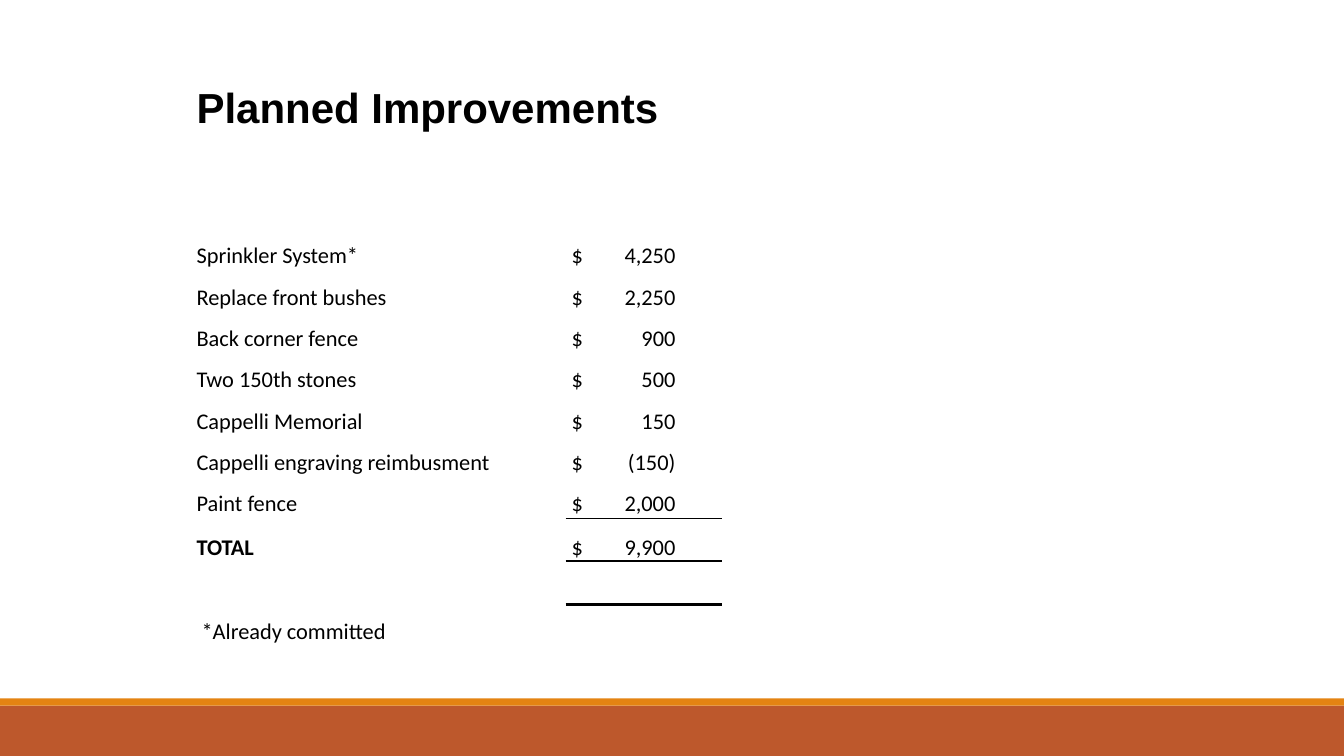
from lxml.etree import SubElement
from pptx import Presentation
from pptx.dml.color import RGBColor
from pptx.enum.shapes import MSO_SHAPE
from pptx.enum.text import MSO_ANCHOR
from pptx.oxml import parse_xml
from pptx.oxml.ns import nsdecls, qn
from pptx.util import Inches, Pt

BLACK = RGBColor(0x00, 0x00, 0x00)
RUST = RGBColor(0xBD, 0x58, 0x2C)
ORANGE = RGBColor(0xE4, 0x83, 0x12)
NO_STYLE = "{2D5ABB26-0587-4C30-8999-92F81FD0307C}"

COLUMN_WIDTHS = [0.51, 2.34, 1.33, 1.55, 3.29]
ROW_HEIGHTS = [0.24, 0.71] + [0.24] * 4 + [0.41] * 7 + [0.43] * 2 + [0.41]
LABEL, AMOUNT = 1, 3
TITLE_ROW, FIRST_ROW, NOTE_ROW = 1, 6, 15
IMPROVEMENTS = [
    ("Sprinkler System*", "4,250"),
    ("Replace front bushes", "2,250"),
    ("Back corner fence", "900"),
    ("Two 150th stones", "500"),
    ("Cappelli Memorial", "150"),
    ("Cappelli engraving reimbusment", "(150)"),
    ("Paint fence", "2,000"),
    ("TOTAL", "9,900"),
]
TOTAL_ROW = FIRST_ROW + len(IMPROVEMENTS) - 1


def write(cell, text, size=16, bold=False, font="Calibri"):
    span = cell.text_frame.paragraphs[0].add_run()
    span.text = text
    span.font.name = font
    span.font.size = Pt(size)
    span.font.bold = bold
    span.font.color.rgb = BLACK


def add_border(cell, side, points):
    line = parse_xml(
        f'<a:{side} {nsdecls("a")} w="{Pt(points)}"><a:solidFill>'
        f'<a:srgbClr val="{BLACK}"/></a:solidFill></a:{side}>')
    cell._tc.get_or_add_tcPr().insert(0, line)


deck = Presentation()
deck.slide_width, deck.slide_height = Inches(13.33), Inches(7.5)
page = deck.slides.add_slide(deck.slide_layouts[6])

# Footer bars
for top, height, color in [(7, 0.5, RUST), (6.93, 0.07, ORANGE)]:
    bar = page.shapes.add_shape(
        MSO_SHAPE.RECTANGLE, 0, Inches(top), deck.slide_width, Inches(height))
    bar.shadow.inherit = False
    bar.fill.solid()
    bar.fill.fore_color.rgb = color
    bar.line.fill.background()

# Table grid
frame = page.shapes.add_table(
    len(ROW_HEIGHTS), len(COLUMN_WIDTHS), Inches(1.43), Inches(0.36),
    Inches(sum(COLUMN_WIDTHS)), Inches(sum(ROW_HEIGHTS)))
table = frame.table
table.first_row = table.horz_banding = False
table._tbl.tblPr.find(qn("a:tableStyleId")).text = NO_STYLE
for column, width in zip(table.columns, COLUMN_WIDTHS):
    column.width = Inches(width)
for row, height in zip(table.rows, ROW_HEIGHTS):
    row.height = Inches(height)
    for cell in row.cells:
        cell.margin_left = cell.margin_right = cell.margin_top = Inches(0.01)
        cell.margin_bottom = 0
        cell.vertical_anchor = MSO_ANCHOR.BOTTOM
        cell.fill.background()
        # Small type in empty cells keeps the short rows short
        SubElement(cell.text_frame.paragraphs[0]._p, qn("a:endParaRPr"), sz="1000")

# Cells that run across columns
for row, last_column in [(TITLE_ROW, 4), (7, 2), (11, 2), (NOTE_ROW, 2)]:
    table.cell(row, LABEL).merge(table.cell(row, last_column))

# Title
write(table.cell(TITLE_ROW, LABEL), "Planned Improvements", 30, True, "Arial")

# Improvements and their costs
for row, (label, amount) in enumerate(IMPROVEMENTS, FIRST_ROW):
    write(table.cell(row, LABEL), label, bold=row == TOTAL_ROW)
    cost = table.cell(row, AMOUNT)
    cost.margin_left = Inches(0.06)
    properties = cost.text_frame.paragraphs[0]._p.get_or_add_pPr()
    stops = SubElement(properties, qn("a:tabLst"))
    SubElement(stops, qn("a:tab"), pos=str(Inches(1.03)), algn="r")
    write(cost, f"$\t{amount}")

# Footnote
note = table.cell(NOTE_ROW, LABEL)
note.margin_left = Inches(0.06)
write(note, "*Already committed")

# Rules under the total and above it
for row, points in [(TOTAL_ROW, 2), (TOTAL_ROW - 1, 0.5)]:
    add_border(table.cell(row, AMOUNT), "lnB", points)
    add_border(table.cell(row + 1, AMOUNT), "lnT", points)

deck.save("out.pptx")
